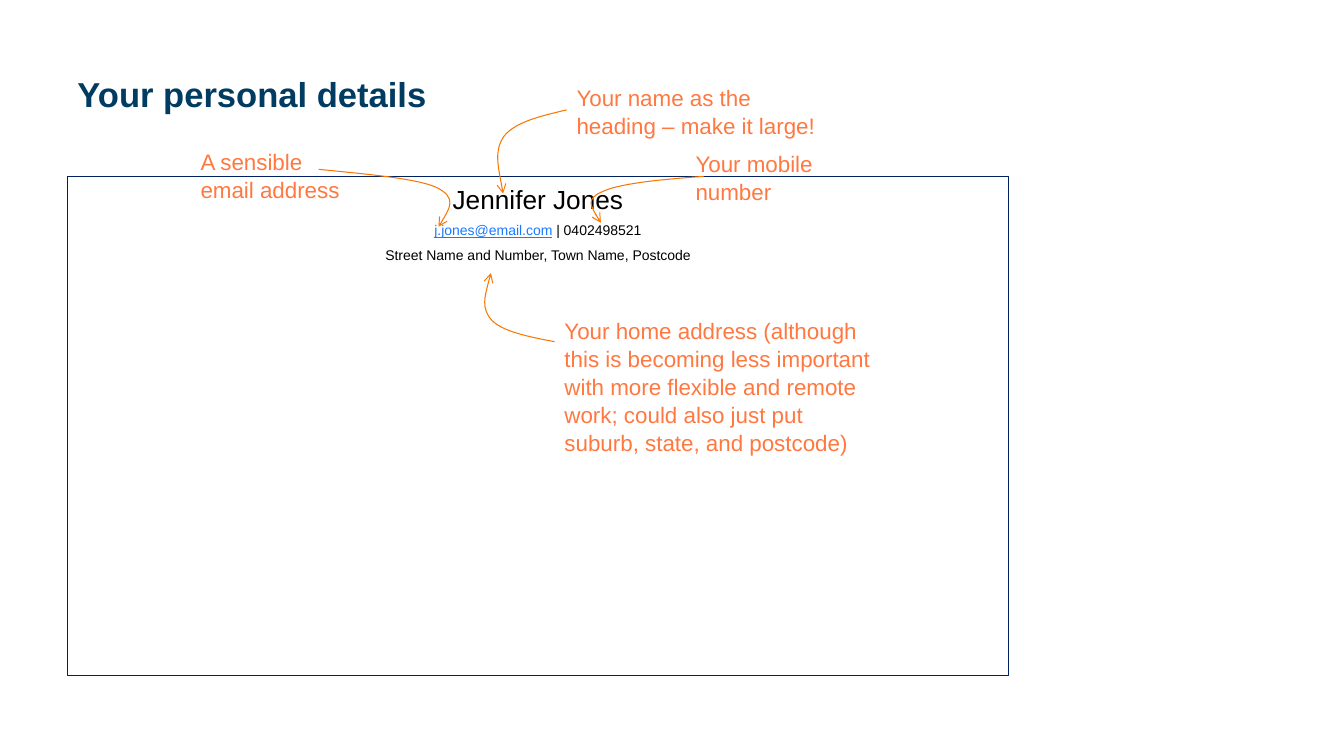
from lxml.etree import SubElement
from pptx import Presentation
from pptx.dml.color import RGBColor
from pptx.enum.shapes import MSO_SHAPE
from pptx.enum.text import MSO_ANCHOR, MSO_AUTO_SIZE, PP_ALIGN
from pptx.oxml.ns import qn
from pptx.util import Pt

PX = 9144
NAVY = RGBColor(0x00, 0x3B, 0x61)
FRAME_BLUE = RGBColor(0x00, 0x20, 0x60)
BLACK = RGBColor(0x00, 0x00, 0x00)
LINK_BLUE = RGBColor(0x19, 0x79, 0xFF)
NOTE_ORANGE = RGBColor(0xFF, 0x78, 0x40)
ARROW_ORANGE = RGBColor(0xF9, 0x76, 0x00)

TITLE_FONT = {"size": Pt(24.7), "bold": True}
NAME_FONT = {"size": Pt(18.7)}
DETAIL_FONT = {"size": Pt(10)}
EMAIL_FONT = {"size": Pt(10), "underline": True}
NOTE_FONT = {"size": Pt(16)}

RESUME_LINES = [
    [("Jennifer Jones", BLACK, NAME_FONT)],
    [("j.jones@email.com", LINK_BLUE, EMAIL_FONT),
     (" | 0402498521", BLACK, DETAIL_FONT)],
    [("Street Name and Number, Town Name, Postcode", BLACK, DETAIL_FONT)],
]

NOTES = [
    ("Your name as the heading – make it large!", (562, 77, 263, 64),
     [(499, 192), (495, 170), (490, 149), (500, 135),
      (511, 121), (537, 115), (562, 109)]),
    ("A sensible email address", (189, 141, 178, 64),
     [(435, 225), (444, 211), (453, 196), (433, 186),
      (413, 177), (365, 173), (316, 168)]),
    ("Your mobile number", (680, 143, 178, 64),
     [(596, 221), (588, 209), (581, 197), (598, 190),
      (615, 182), (656, 178), (698, 175)]),
    ("Your home address (although this is becoming less important with more "
     "flexible and remote work; could also just put suburb, state, and postcode)",
     (550, 308, 328, 145),
     [(487, 271), (482, 289), (477, 306), (488, 318),
      (499, 329), (524, 334), (550, 339)]),
]


def emu(box):
    return [length * PX for length in box]


def apply(target, formats):
    for attribute, value in formats.items():
        setattr(target, attribute, value)


def add_run(paragraph, text, color, formats):
    run = paragraph.add_run()
    run.text = text
    apply(run.font, {"name": "Arial", **formats})
    run.font.color.rgb = color


def add_label(slide, box, text, color, font, frame_formats):
    label = slide.shapes.add_textbox(*emu(box)).text_frame
    apply(label, {"word_wrap": True, **frame_formats})
    line = label.paragraphs[0]
    line.line_spacing = 1.05
    add_run(line, text, color, font)


def add_resume(slide, box):
    resume = slide.shapes.add_shape(MSO_SHAPE.RECTANGLE, *emu(box))
    resume.shadow.inherit = False
    resume.fill.background()
    resume.line.color.rgb = FRAME_BLUE
    resume.line.width = Pt(0.75)
    content = resume.text_frame
    apply(content, {"word_wrap": True, "vertical_anchor": MSO_ANCHOR.TOP})
    for index, runs in enumerate(RESUME_LINES):
        line = content.add_paragraph() if index else content.paragraphs[0]
        apply(line, {"alignment": PP_ALIGN.CENTER, "line_spacing": 1.05,
                     "space_before": Pt(4.8 if index else 0)})
        for run in runs:
            add_run(line, *run)


def add_curved_arrow(slide, points):
    builder = slide.shapes.build_freeform(*points[0], scale=PX)
    builder.add_line_segments(points[1:], close=False)
    arrow = builder.convert_to_shape()
    arrow.shadow.inherit = False
    arrow.fill.background()
    arrow.line.color.rgb = ARROW_ORANGE
    arrow.line.width = Pt(0.75)
    SubElement(arrow.line._get_or_add_ln(), qn("a:headEnd"), type="arrow")

    outline = next(arrow._element.iter(qn("a:path")))
    segments = outline.findall(qn("a:lnTo"))
    for start in range(0, len(segments), 3):
        curve = SubElement(outline, qn("a:cubicBezTo"))
        for segment in segments[start:start + 3]:
            curve.append(segment[0])
            outline.remove(segment)


def main():
    deck = Presentation()
    deck.slide_width, deck.slide_height = emu((1333, 750))
    slide = deck.slides.add_slide(deck.slide_layouts[6])
    add_label(slide, (67, 29, 1003, 125), "Your personal details", NAVY,
              TITLE_FONT, {"vertical_anchor": MSO_ANCHOR.MIDDLE})
    add_resume(slide, (67, 175, 933, 495))
    for text, box, curve in NOTES:
        add_curved_arrow(slide, curve)
        add_label(slide, box, text, NOTE_ORANGE, NOTE_FONT,
                  {"auto_size": MSO_AUTO_SIZE.SHAPE_TO_FIT_TEXT})
    deck.save("out.pptx")


if __name__ == "__main__":
    main()
